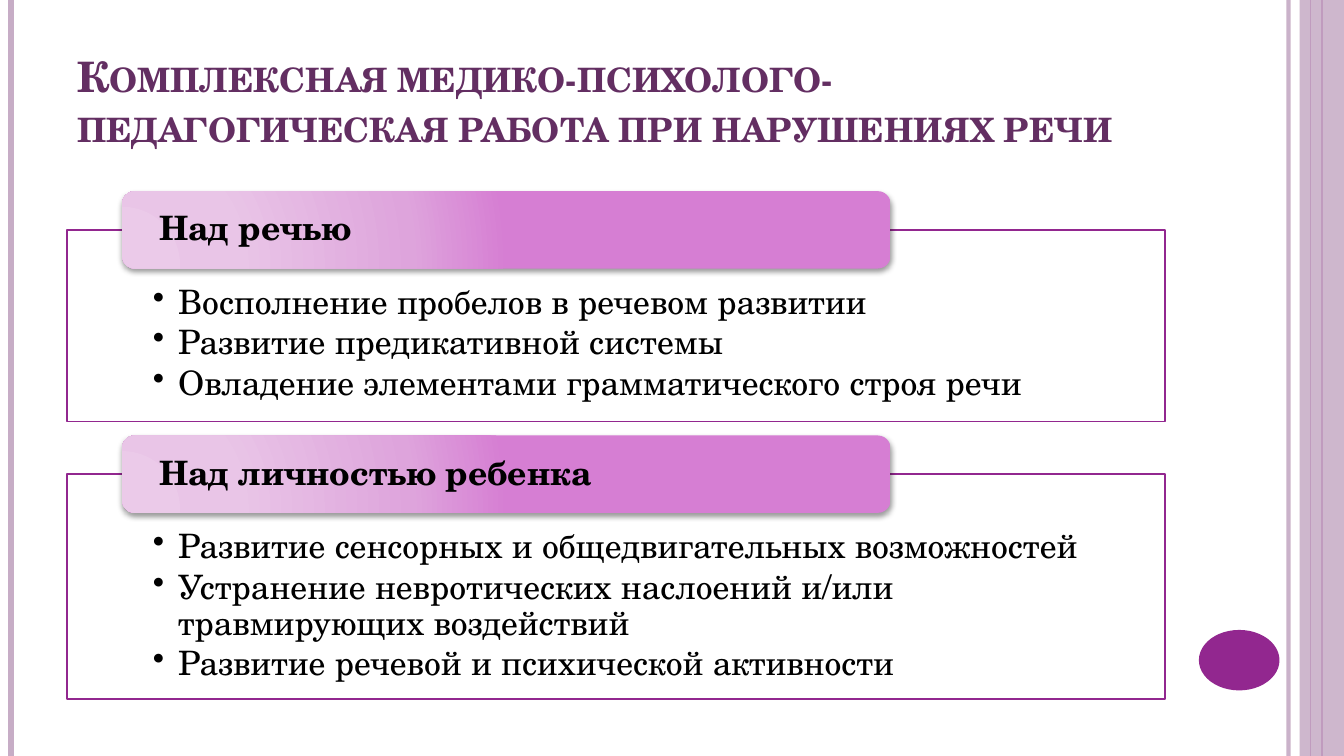
from lxml.etree import SubElement
from pptx import Presentation
from pptx.dml.color import RGBColor
from pptx.enum.shapes import MSO_CONNECTOR as Connector, MSO_SHAPE as Shape
from pptx.enum.text import MSO_ANCHOR as Anchor, PP_ALIGN as Align
from pptx.oxml import parse_xml
from pptx.oxml.ns import nsdecls, qn
from pptx.util import Inches, Pt

WIDTH, HEIGHT = Inches(13.33), Inches(7.5)
FONT = "TeX Gyre Schola"
COLORS = {
    "accent": "92278F", "mauve": "C7ADC6", "title": "632E62",
    "paper": "FFFFFF", "ink": "000000",
}
TAB_STOPS = [(0, "EBCAE9"), (30, "E9C5E7"), (75, "DEA4DC"), (100, "D67ED3")]
RULES = [
    (95.87, "mauve", 3, 93), (0.83, "mauve", 4.5, 100),
    (98.35, "accent", 1.5, 100), (97.52, "accent", 0.75, 100),
]
TITLE = "Комплексная медико-психолого-педагогическая работа при нарушениях речи"
SECTIONS = [
    ("Над речью", 25.33, [
        "Восполнение пробелов в речевом развитии",
        "Развитие предикативной системы",
        "Овладение элементами грамматического строя речи",
    ]),
    ("Над личностью ребенка", 29.73, [
        "Развитие сенсорных и общедвигательных возможностей",
        "Устранение невротических наслоений и/или травмирующих воздействий",
        "Развитие речевой и психической активности",
    ]),
]
TAB_HEIGHT, SECTION_GAP = 10.24, 1.87


def cols(share):
    """Length of a share of the slide width, in percent."""
    return round(WIDTH * share / 100)


def rows(share):
    """Length of a share of the slide height, in percent."""
    return round(HEIGHT * share / 100)


def paint(fill, color, alpha=100):
    """Set a solid colour with an optional opacity in percent."""
    fill.solid()
    fill.fore_color.rgb = RGBColor.from_string(COLORS[color])
    if alpha < 100:
        rgb = fill._xPr.find(qn("a:solidFill")).find(qn("a:srgbClr"))
        SubElement(rgb, qn("a:alpha")).set("val", str(alpha * 1000))


def add_block(slide, kind, box, color, alpha=100):
    """Add a flat, borderless shape in a box given in grid shares."""
    left, top, width, height = box
    block = slide.shapes.add_shape(kind, cols(left), rows(top), cols(width), rows(height))
    block.shadow.inherit = False
    paint(block.fill, color, alpha)
    block.line.fill.background()
    return block


def write(frame, lines, size, color="ink", bold=False, anchor=Anchor.TOP):
    """Write left-aligned paragraphs into a text frame."""
    frame.word_wrap = True
    frame.vertical_anchor = anchor
    frame.text = "\n".join(lines)
    for paragraph in frame.paragraphs:
        paragraph.alignment = Align.LEFT
        font = paragraph.runs[0].font
        font.name, font.size, font.bold = FONT, Pt(size), bold
        font.color.rgb = RGBColor.from_string(COLORS[color])


def set_margins(frame, left, top, bottom):
    """Set the insets of a text frame, equal on both sides."""
    frame.margin_left = frame.margin_right = Inches(left)
    frame.margin_top, frame.margin_bottom = Inches(top), Inches(bottom)


def add_frame(slide):
    """Draw the vertical rules, the side band and the oval of the theme."""
    for x, color, weight, alpha in RULES:
        rule = slide.shapes.add_connector(Connector.STRAIGHT, cols(x), 0, cols(x), HEIGHT)
        paint(rule.line.fill, color, alpha)
        rule.line.width = Pt(weight)
        SubElement(rule._element.spPr, qn("a:effectLst"))
    add_block(slide, Shape.RECTANGLE, (96.7, 0, 3.3, 100), "mauve", 87)
    add_block(slide, Shape.OVAL, (89.2, 83.33, 6, 8), "accent")


def add_title(slide, box):
    """Place the heading in small capitals at the bottom of its box."""
    left, top, width, height = box
    heading = slide.shapes.add_textbox(cols(left), rows(top), cols(width), rows(height))
    write(heading.text_frame, [TITLE], 30, "title", True, Anchor.BOTTOM)
    run = heading.text_frame.paragraphs[0].runs[0]
    run.font._element.set("cap", "small")


def add_tab(slide, box, caption):
    """Add a rounded gradient tab with a soft shadow and a bold caption."""
    tab = add_block(slide, Shape.ROUNDED_RECTANGLE, box, "accent")
    stops = "".join(
        f'<a:gs pos="{place * 1000}"><a:srgbClr val="{color}"/></a:gs>'
        for place, color in TAB_STOPS
    )
    gradient = parse_xml(
        f'<a:gradFill {nsdecls("a")} rotWithShape="1"><a:gsLst>{stops}</a:gsLst>'
        '<a:path path="circle"><a:fillToRect l="5000" t="100000" r="120000" b="10000"/>'
        "</a:path></a:gradFill>"
    )
    properties = tab._element.spPr
    properties.replace(properties.find(qn("a:solidFill")), gradient)
    properties.find(qn("a:effectLst")).append(parse_xml(
        f'<a:outerShdw {nsdecls("a")} blurRad="{Pt(4)}" dist="{Pt(2)}" dir="5400000" '
        'rotWithShape="0"><a:srgbClr val="000000"><a:alpha val="40000"/></a:srgbClr>'
        "</a:outerShdw>"
    ))
    write(tab.text_frame, [caption], 24, bold=True, anchor=Anchor.MIDDLE)
    set_margins(tab.text_frame, 0.33, 0, 0)
    tab.text_frame.paragraphs[0].line_spacing = 0.9


def add_section(slide, box, caption, tasks):
    """Add an outlined card of bullets with a tab across its top edge."""
    left, top, width, height = box
    card = add_block(slide, Shape.RECTANGLE, box, "paper", 90)
    paint(card.line.fill, "accent")
    card.line.width = Pt(1)
    write(card.text_frame, tasks, 24)
    set_margins(card.text_frame, 0.85, 0.55, 0.19)
    for paragraph in card.text_frame.paragraphs:
        paragraph.line_spacing, paragraph.space_after = 0.9, Pt(3)
        layout = paragraph._p.get_or_add_pPr()
        layout.set("marL", str(Inches(0.25)))
        layout.set("indent", str(-Inches(0.25)))
        SubElement(layout, qn("a:buChar")).set("char", "•")
    tab_box = (left + width * 0.05, top - TAB_HEIGHT / 2, width * 0.7, TAB_HEIGHT)
    add_tab(slide, tab_box, caption)


def main():
    """Build and save the slide."""
    deck = Presentation()
    deck.slide_width, deck.slide_height = WIDTH, HEIGHT
    slide = deck.slides.add_slide(deck.slide_layouts[6])
    add_frame(slide)
    add_title(slide, (5, 4, 81.7, 16.67))
    top = 30.4
    for caption, height, tasks in SECTIONS:
        add_section(slide, (5, top, 81.7, height), caption, tasks)
        top += height + SECTION_GAP + TAB_HEIGHT / 2
    deck.save("out.pptx")


if __name__ == "__main__":
    main()
